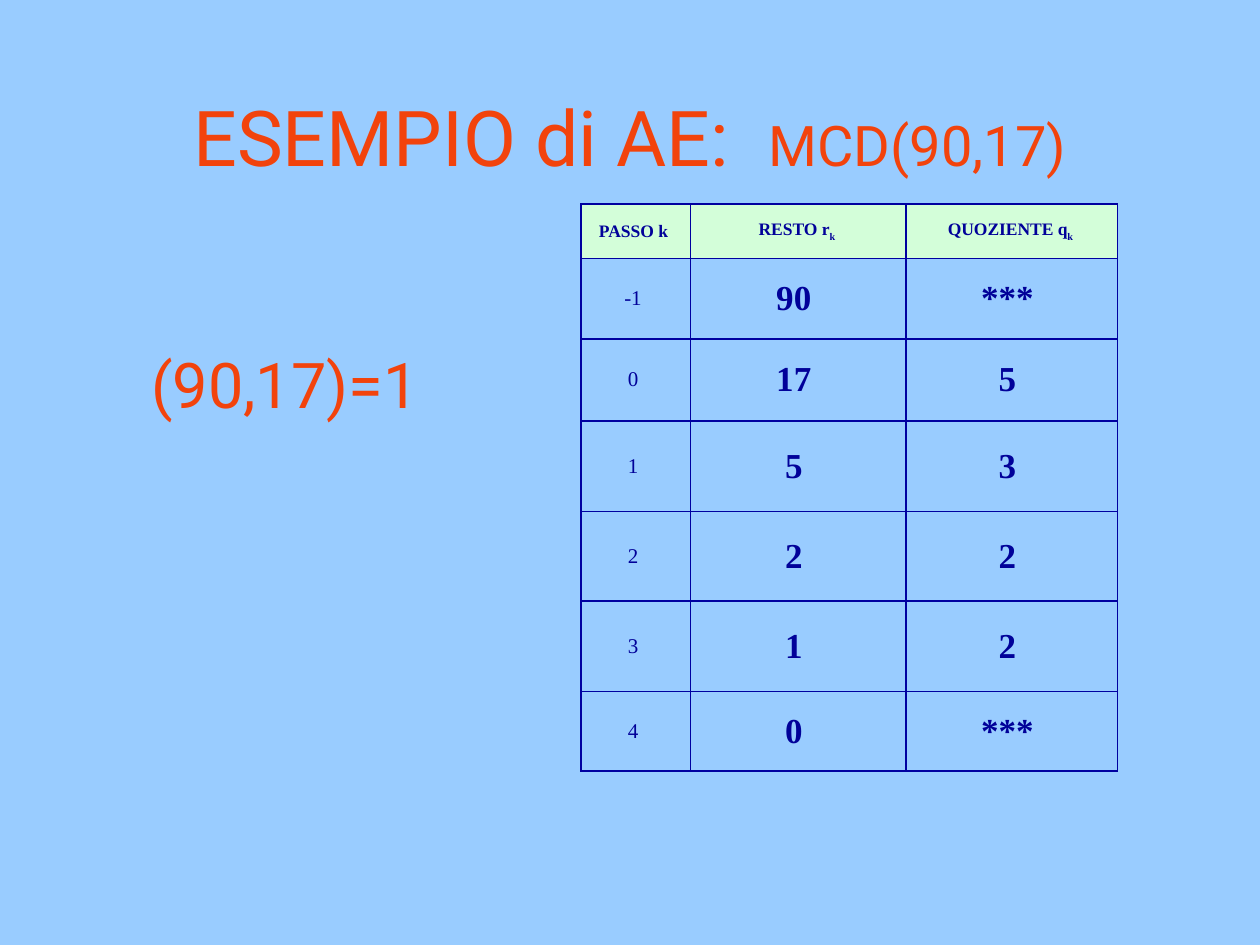
from dataclasses import dataclass, field
from typing import Any

import pptx
import pptx.dml.color
import pptx.enum.text
import pptx.oxml
import pptx.oxml.ns
import pptx.util

Inches = pptx.util.Inches
Pt = pptx.util.Pt
RGBColor = pptx.dml.color.RGBColor
Align = pptx.enum.text.PP_ALIGN
Anchor = pptx.enum.text.MSO_ANCHOR

SKY = RGBColor(0x99, 0xCC, 0xFF)
ORANGE = RGBColor(0xF2, 0x43, 0x0C)
NAVY = RGBColor(0x01, 0x01, 0x99)
MINT = RGBColor(0xD3, 0xFE, 0xD9)
BORDER = RGBColor(0x00, 0x00, 0xA0)

DISPLAY = {"name": "Roboto", "bold": False}
HEADER = {"name": "Times New Roman", "size": Pt(10), "bold": True}
STEP = {"name": "Times New Roman", "size": Pt(12), "bold": False}
VALUE = {"name": "Times New Roman", "size": Pt(20), "bold": True}

COLUMN_WIDTHS = (0.87, 1.71, 1.68)
ROW_HEIGHTS = (0.43, 0.64, 0.65, 0.72, 0.71, 0.72, 0.63)
STEPS = (
    ("-1", "90", "***"),
    ("0", "17", "5"),
    ("1", "5", "3"),
    ("2", "2", "2"),
    ("3", "1", "2"),
    ("4", "0", "***"),
)


@dataclass(frozen=True)
class Span:
    text: str
    font: dict[str, Any]
    color: RGBColor
    extra: dict[str, str] = field(default_factory=dict)


@dataclass(frozen=True)
class TextBox:
    left: float
    top: float
    width: float
    height: float
    frame: dict[str, Any]
    align: Align
    spans: tuple[Span, ...]


def write_spans(frame: Any, spans: tuple[Span, ...], align: Align) -> None:
    para = frame.paragraphs[0]
    para.alignment = align
    for span in spans:
        run = para.add_run()
        run.text = span.text
        for name, value in span.font.items():
            setattr(run.font, name, value)
        run.font.color.rgb = span.color
        for name, value in span.extra.items():
            run._r.get_or_add_rPr().set(name, value)


def draw_text(page: Any, item: TextBox) -> None:
    box = page.shapes.add_textbox(
        Inches(item.left), Inches(item.top), Inches(item.width), Inches(item.height)
    )
    for name, value in item.frame.items():
        setattr(box.text_frame, name, value)
    write_spans(box.text_frame, item.spans, item.align)


def add_borders(cell: Any) -> None:
    properties = cell._tc.get_or_add_tcPr()
    namespace = pptx.oxml.ns.nsdecls("a")
    for position, side in enumerate(("lnL", "lnR", "lnT", "lnB")):
        line = pptx.oxml.parse_xml(
            f'<a:{side} {namespace} w="{Pt(1)}"><a:solidFill>'
            f'<a:srgbClr val="{BORDER}"/></a:solidFill></a:{side}>'
        )
        properties.insert(position, line)


def draw_cell(cell: Any, spans: tuple[Span, ...], fill: RGBColor | None) -> None:
    cell.vertical_anchor = Anchor.MIDDLE
    if fill is None:
        cell.fill.background()
    else:
        cell.fill.solid()
        cell.fill.fore_color.rgb = fill
    add_borders(cell)
    write_spans(cell.text_frame, spans, Align.CENTER)


def draw_steps_table(page: Any) -> None:
    table = page.shapes.add_table(
        len(ROW_HEIGHTS),
        len(COLUMN_WIDTHS),
        Inches(4.61),
        Inches(1.62),
        Inches(sum(COLUMN_WIDTHS)),
        Inches(sum(ROW_HEIGHTS)),
    ).table
    table.first_row = False
    table.horz_banding = False
    for column, width in zip(table.columns, COLUMN_WIDTHS):
        column.width = Inches(width)
    for row, height in zip(table.rows, ROW_HEIGHTS):
        row.height = Inches(height)

    subscript = Span("k ", HEADER, NAVY, {"baseline": "-30000"})
    headings = (
        (Span("PASSO k ", HEADER, NAVY),),
        (Span("RESTO r", HEADER, NAVY), subscript),
        (Span("QUOZIENTE q", HEADER, NAVY), subscript),
    )
    for column, spans in enumerate(headings):
        draw_cell(table.cell(0, column), spans, MINT)
    for row, values in enumerate(STEPS, start=1):
        for column, value in enumerate(values):
            font = VALUE if column else STEP
            draw_cell(table.cell(row, column), (Span(f"{value} ", font, NAVY),), None)


def main() -> None:
    deck = pptx.Presentation()
    deck.slide_width = Inches(10)
    deck.slide_height = Inches(7.5)
    page = deck.slides.add_slide(deck.slide_layouts[6])
    page.background.fill.solid()
    page.background.fill.fore_color.rgb = SKY

    large = DISPLAY | {"size": Pt(44)}
    title = TextBox(
        0.5, 0.32, 9, 1.51,
        {"word_wrap": True, "vertical_anchor": Anchor.MIDDLE},
        Align.CENTER,
        (
            Span("ESEMPIO di AE:", large, ORANGE),
            Span(" ", large, ORANGE, {"spc": "1100"}),
            Span("MCD(90,17)", DISPLAY | {"size": Pt(32)}, ORANGE),
        ),
    )
    result = TextBox(
        0.5, 2.08, 4.42, 4.5,
        {"word_wrap": True, "margin_left": Inches(0.7), "margin_top": Inches(0.66)},
        Align.LEFT,
        (Span("(90,17)=1", DISPLAY | {"size": Pt(36)}, ORANGE),),
    )
    for item in (title, result):
        draw_text(page, item)
    draw_steps_table(page)
    deck.save("out.pptx")


if __name__ == "__main__":
    main()
